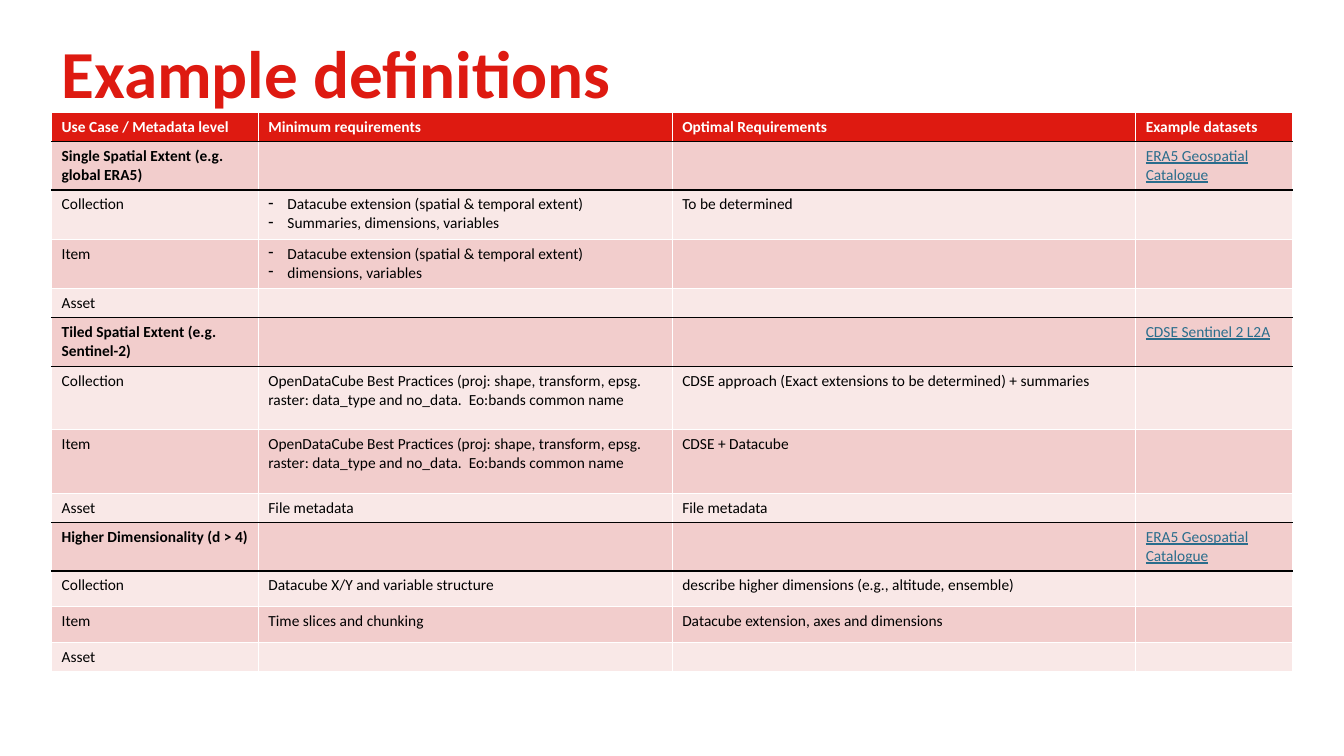
from lxml.etree import SubElement
from pptx import Presentation
from pptx.dml.color import RGBColor
from pptx.enum.text import MSO_ANCHOR
from pptx.oxml.ns import qn
from pptx.util import Cm, Pt

FONT = "Calibri"
COLORS = {
    "red": "DE1A11",
    "rose": "F2CDCC",
    "blush": "F9E8E7",
    "link": "2A6D8C",
    "black": "000000",
    "white": "FFFFFF",
}
TITLE = "Example definitions"
BEST_PRACTICES = (
    "OpenDataCube Best Practices (proj: shape, transform, epsg. "
    "raster: data_type and no_data.  Eo:bands common name"
)
EXTENT = "Datacube extension (spatial & temporal extent)"

COLUMN_WIDTHS = [5.21, 10.43, 11.68, 3.96]
ROWS = [
    ("header", 0.74, ["Use Case / Metadata level", "Minimum requirements",
                      "Optimal Requirements", "Example datasets"]),
    ("section", 1.22, ["Single Spatial Extent (e.g. global ERA5)", "", "",
                       "ERA5 Geospatial Catalogue"]),
    ("level", 1.24, ["Collection", [EXTENT, "Summaries, dimensions, variables"],
                     "To be determined", ""]),
    ("level", 1.24, ["Item", [EXTENT, "dimensions, variables"], "", ""]),
    ("level", 0.74, ["Asset", "", "", ""]),
    ("section", 1.22, ["Tiled Spatial Extent (e.g. Sentinel-2)", "", "",
                       "CDSE Sentinel 2 L2A"]),
    ("level", 1.6, ["Collection", BEST_PRACTICES,
                    "CDSE approach (Exact extensions to be determined) + summaries", ""]),
    ("level", 1.6, ["Item", BEST_PRACTICES, "CDSE + Datacube", ""]),
    ("level", 0.74, ["Asset", "File metadata", "File metadata", ""]),
    ("section", 1.22, ["Higher Dimensionality (d > 4)", "", "",
                       "ERA5 Geospatial Catalogue"]),
    ("level", 0.9, ["Collection", "Datacube X/Y and variable structure",
                    "describe higher dimensions (e.g., altitude, ensemble)", ""]),
    ("level", 0.9, ["Item", "Time slices and chunking",
                    "Datacube extension, axes and dimensions", ""]),
    ("level", 0.74, ["Asset", "", "", ""]),
]


def rgb(name):
    return RGBColor.from_string(COLORS[name])


def add_run(paragraph, text, size, color, bold=False, underline=False):
    run = paragraph.add_run()
    run.text = text
    run.font.name = FONT
    run.font.size = Pt(size)
    run.font.color.rgb = rgb(color)
    run.font.bold = bold
    run.font.underline = underline


def add_dash(paragraph):
    properties = paragraph._p.get_or_add_pPr()
    properties.set("marL", str(Cm(0.48)))
    properties.set("indent", str(-Cm(0.48)))
    SubElement(properties, qn("a:buChar"), char="-")


def set_borders(cell, top, bottom):
    properties = cell._tc.get_or_add_tcPr()
    sides = [("a:lnL", "white"), ("a:lnR", "white"), ("a:lnT", top), ("a:lnB", bottom)]
    for position, (tag, color) in enumerate(sides):
        line = SubElement(properties, qn(tag), w=str(Pt(1)))
        fill = SubElement(line, qn("a:solidFill"))
        SubElement(fill, qn("a:srgbClr"), val=COLORS[color])
        properties.insert(position, line)


def edge_color(upper, lower):
    on_section = 0 < lower < len(ROWS) and "section" in (ROWS[upper][0], ROWS[lower][0])
    return "black" if on_section else "white"


def fill_cell(cell, content, role, column):
    lines = content if isinstance(content, list) else [content]
    is_link = role == "section" and column == 3
    color = "white" if role == "header" else "link" if is_link else "black"
    bold = role != "level" and not is_link
    for index, line in enumerate(lines):
        frame = cell.text_frame
        paragraph = frame.paragraphs[0] if index == 0 else frame.add_paragraph()
        if isinstance(content, list):
            add_dash(paragraph)
        if line:
            add_run(paragraph, line, 11, color, bold, is_link)
        else:
            SubElement(paragraph._p, qn("a:endParaRPr"), sz="1100")


def add_title(slide):
    shape = slide.shapes.add_textbox(Cm(1.3), Cm(0.84), Cm(21.13), Cm(2.31))
    frame = shape.text_frame
    frame.word_wrap = True
    frame.vertical_anchor = MSO_ANCHOR.MIDDLE
    frame.margin_left = frame.margin_right = Cm(0.25)
    frame.margin_top = frame.margin_bottom = Cm(0.25)
    paragraph = frame.paragraphs[0]
    paragraph.line_spacing = 0.8
    add_run(paragraph, TITLE, 48, "red", bold=True)


def add_definitions(slide):
    height = sum(row[1] for row in ROWS)
    table = slide.shapes.add_table(
        len(ROWS), len(COLUMN_WIDTHS), Cm(1.3), Cm(2.83),
        Cm(sum(COLUMN_WIDTHS)), Cm(height),
    ).table
    for column, width in zip(table.columns, COLUMN_WIDTHS):
        column.width = Cm(width)
    for row_index, (role, row_height, contents) in enumerate(ROWS):
        table.rows[row_index].height = Cm(row_height)
        band = "red" if role == "header" else "rose" if row_index % 2 else "blush"
        for column_index, content in enumerate(contents):
            cell = table.cell(row_index, column_index)
            cell.fill.solid()
            cell.fill.fore_color.rgb = rgb(band)
            set_borders(cell, edge_color(row_index - 1, row_index),
                        edge_color(row_index, row_index + 1))
            fill_cell(cell, content, role, column_index)


def main():
    presentation = Presentation()
    presentation.slide_width = Cm(33.87)
    presentation.slide_height = Cm(19.05)
    slide = presentation.slides.add_slide(presentation.slide_layouts[6])
    add_title(slide)
    add_definitions(slide)
    presentation.save("out.pptx")


if __name__ == "__main__":
    main()
